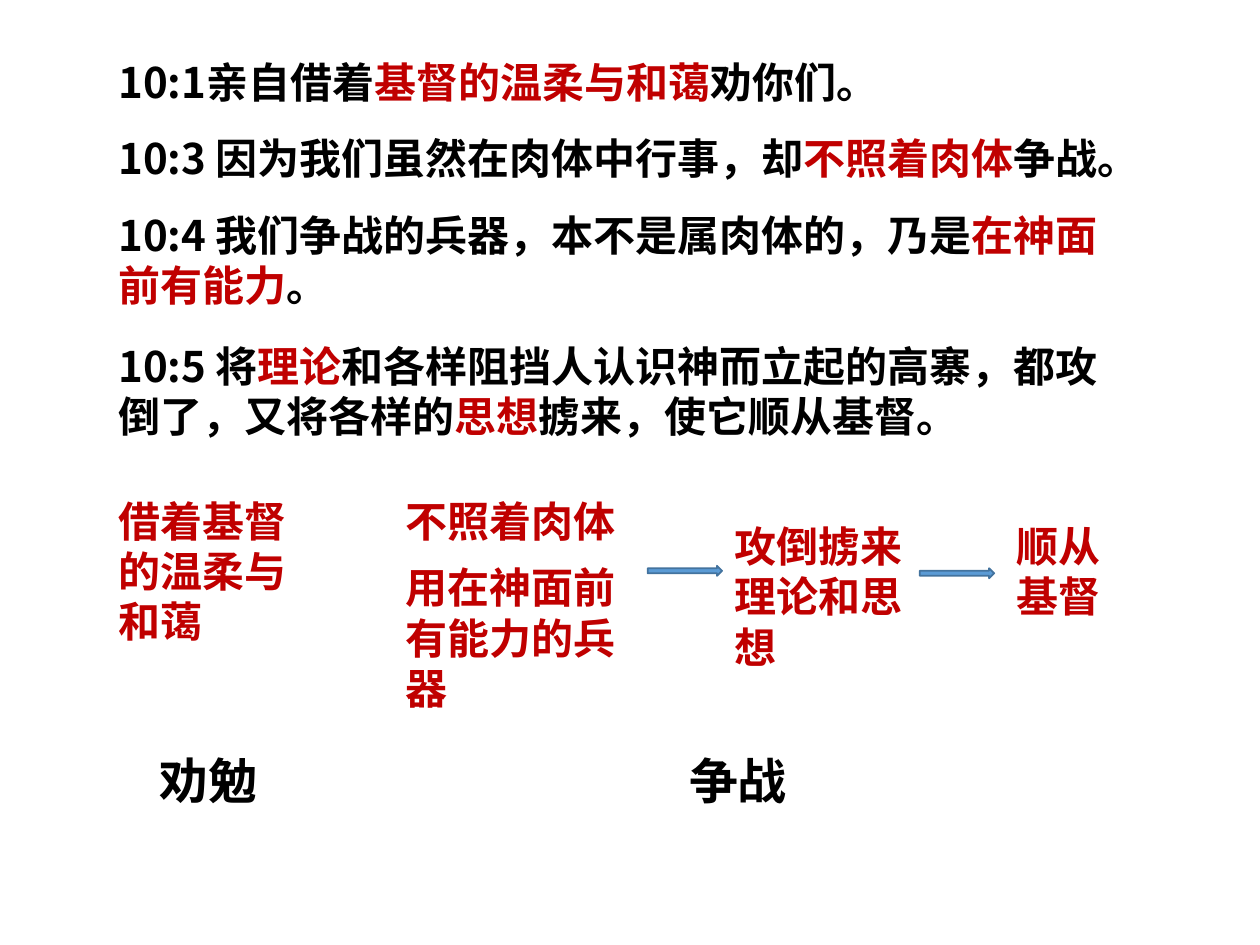
from lxml import etree
from pptx import Presentation
from pptx.dml.color import RGBColor
from pptx.enum.shapes import MSO_SHAPE
from pptx.enum.text import MSO_AUTO_SIZE
from pptx.oxml.ns import qn
from pptx.util import Inches, Pt

RIGHT_ARROW = MSO_SHAPE.RIGHT_ARROW
GROW = MSO_AUTO_SIZE.SHAPE_TO_FIT_TEXT
FONT = "Noto Sans CJK SC"
BLACK = RGBColor(0x00, 0x00, 0x00)
RED = RGBColor(0xC0, 0x00, 0x00)
BLUE = RGBColor(0x5B, 0x9B, 0xD5)
DARK_BLUE = RGBColor(0x43, 0x73, 0x9E)

# Row heights for one, two and three lines of 24 pt text
LINE_HEIGHTS = {1: 0.5, 2: 0.91, 3: 1.31}

# Each verse: top offset, lines, (text, colour) runs
VERSES = [
    (0, 1, [("10:1亲自借着", BLACK), ("基督的温柔与和蔼", RED), ("劝你们。", BLACK)]),
    (0.6, 1, [("10:3 因为我们虽然在肉体中行事，却", BLACK), ("不照着肉体", RED),
              ("争战。", BLACK)]),
    (1.21, 2, [("10:4 我们争战的兵器，本不是属肉体的，乃是", BLACK),
               ("在神面前有能力", RED), ("。", BLACK)]),
    (2.25, 2, [("10:5 将", BLACK), ("理论", RED),
               ("和各样阻挡人认识神而立起的高寨，都攻倒了，又将各样的", BLACK),
               ("思想", RED), ("掳来，使它顺从基督。", BLACK)]),
]

# Each step: left and top offset, width, lines, text
STEPS = [
    (0, 0, 1.54, 3, "借着基督的温柔与和蔼"),
    (2.28, 0, 1.87, 1, "不照着肉体"),
    (2.28, 0.53, 1.87, 3, "用在神面前有能力的兵器"),
    (4.89, 0.2, 1.74, 3, "攻倒掳来理论和思想"),
    (7.13, 0.2, 0.9, 2, "顺从基督"),
]
ARROWS = [(4.3, 0.61), (6.46, 0.63)]
HEADINGS = [(0, "劝勉"), (4.2, "争战")]


def add_text(s, left, top, width, height, runs, size=24, wrap=True):
    """Add a bold text box made of (text, colour) runs."""
    box = s.shapes.add_textbox(Inches(left), Inches(top), Inches(width), Inches(height))
    tf = box.text_frame
    tf.word_wrap = wrap
    tf.auto_size = GROW
    p = tf.paragraphs[0]
    for text, colour in runs:
        r = p.add_run()
        r.text = text
        r.font.size = Pt(size)
        r.font.bold = True
        r.font.color.rgb = colour
        r.font.name = FONT
        etree.SubElement(r.font._element, qn("a:ea"), typeface=FONT)


def add_arrow(s, left, top):
    arrow = s.shapes.add_shape(RIGHT_ARROW, Inches(left), Inches(top),
                               Inches(0.59), Inches(0.08))
    arrow.shadow.inherit = False
    arrow.fill.solid()
    arrow.fill.fore_color.rgb = BLUE
    arrow.line.color.rgb = DARK_BLUE
    arrow.line.width = Pt(1)


def add_verses(s, left, top, width):
    for offset, lines, runs in VERSES:
        add_text(s, left, top + offset, width, LINE_HEIGHTS[lines], runs)


def add_steps(s, left, top):
    for dx, dy, width, lines, text in STEPS:
        add_text(s, left + dx, top + dy, width, LINE_HEIGHTS[lines],
                 [(text, RED)], wrap=lines > 1)
    for dx, dy in ARROWS:
        add_arrow(s, left + dx, top + dy)


def add_headings(s, left, top):
    for dx, text in HEADINGS:
        add_text(s, left + dx, top, 0.99, 0.57, [(text, BLACK)], size=28, wrap=False)


def main():
    prs = Presentation()
    prs.slide_width = Inches(10)
    prs.slide_height = Inches(7.5)
    s = prs.slides.add_slide(prs.slide_layouts[6])
    add_verses(s, 0.84, 0.4, 8.19)
    add_steps(s, 0.84, 3.88)
    add_headings(s, 1.17, 5.91)
    prs.save("out.pptx")


if __name__ == "__main__":
    main()
